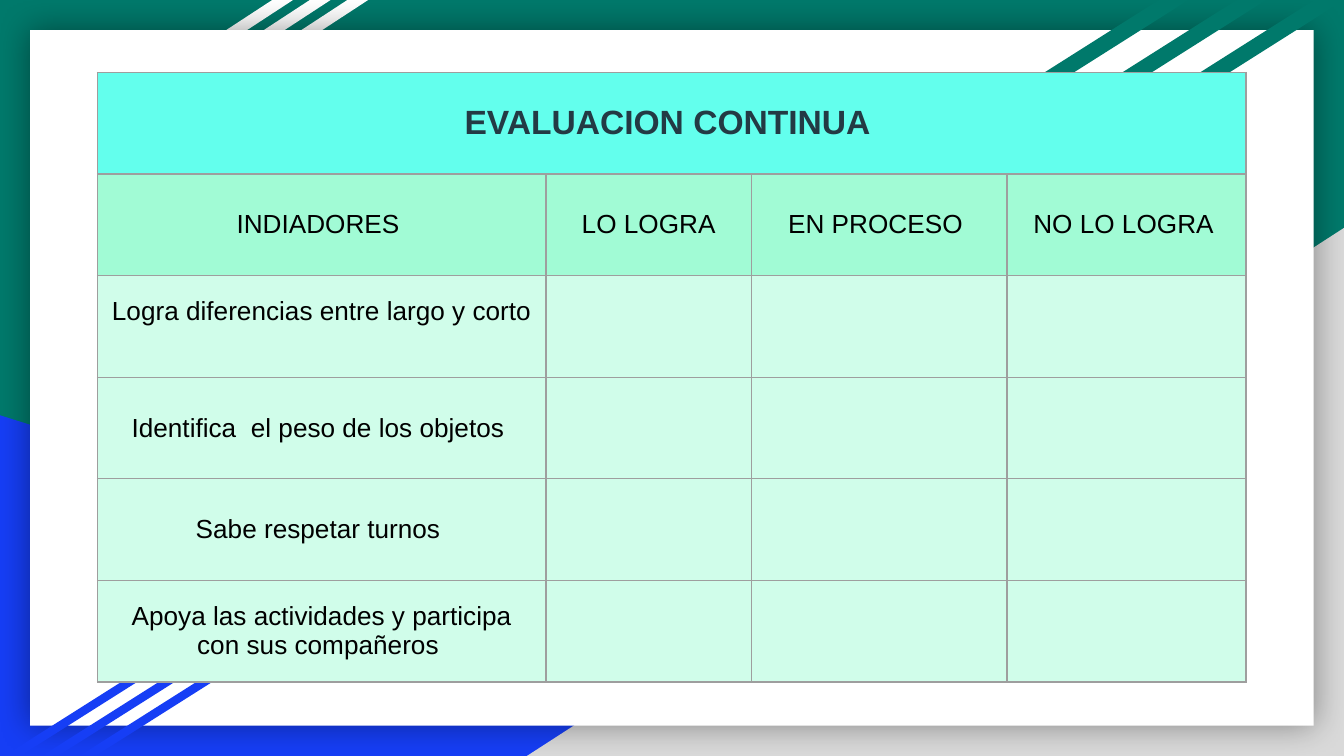
from dataclasses import dataclass

from lxml.etree import SubElement
from pptx import Presentation
from pptx.dml.color import RGBColor
from pptx.enum.shapes import MSO_SHAPE
from pptx.enum.text import MSO_ANCHOR, PP_ALIGN
from pptx.oxml.ns import qn
from pptx.util import Cm, Pt


@dataclass(frozen=True)
class Theme:
    green: str = "00796B"
    blue: str = "163EF5"
    grey: str = "D9D9D9"
    white: str = "FFFFFF"
    shadow: str = "000000"
    border: str = "9E9E9E"
    title_fill: str = "63FFED"
    header_fill: str = "A1FBD5"
    body_fill: str = "D0FDEA"
    title_text: str = "233A44"
    text: str = "000000"
    font: str = "Arial"
    title_size: int = 18
    text_size: int = 14
    border_width: float = 0.75


THEME = Theme()

HEADERS = ["INDIADORES ", "LO LOGRA", "EN PROCESO ", "NO LO LOGRA "]
INDICATORS = [
    "Logra diferencias entre largo y corto",
    "Identifica  el peso de los objetos ",
    "Sabe respetar turnos ",
    "Apoya las actividades y participa con sus compañeros ",
]
COLUMN_WIDTHS = [8.48, 3.88, 4.83, 4.52]
ROW_HEIGHT = 1.92


def set_format(target, values):
    for name, value in values.items():
        setattr(target, name, value)


def add_shape(shapes, kind, left, top, width, height, color):
    shape = shapes.add_shape(kind, Cm(left), Cm(top), Cm(width), Cm(height))
    shape.shadow.inherit = False
    shape.fill.solid()
    shape.fill.fore_color.rgb = RGBColor.from_string(color)
    shape.line.fill.background()
    return shape


def add_stripes(slide, left, top, width, height, step, slant, color):
    """Group three equally spaced slanted bars, the rightmost at the back."""
    group = slide.shapes.add_group_shape()
    for index in reversed(range(3)):
        bar = add_shape(group.shapes, MSO_SHAPE.PARALLELOGRAM,
                        left + index * step, top, width, height, color)
        bar.adjustments[0] = slant


def add_glow_shadow(shape):
    effects = shape._element.spPr.find(qn("a:effectLst"))
    shadow = SubElement(effects, qn("a:outerShdw"), blurRad=str(Pt(18)),
                        dist="0", dir="0", algn="ctr", rotWithShape="0")
    color = SubElement(shadow, qn("a:srgbClr"), val=THEME.shadow)
    SubElement(color, qn("a:alpha"), val="40000")


def add_borders(cell):
    properties = cell._tc.get_or_add_tcPr()
    for side in ("a:lnL", "a:lnR", "a:lnT", "a:lnB"):
        line = SubElement(properties, qn(side), w=str(Pt(THEME.border_width)))
        fill = SubElement(line, qn("a:solidFill"))
        SubElement(fill, qn("a:srgbClr"), val=THEME.border)


def format_cell(cell, fill):
    margins = ("margin_left", "margin_right", "margin_top", "margin_bottom")
    set_format(cell, dict.fromkeys(margins, Cm(0.25)))
    cell.vertical_anchor = MSO_ANCHOR.MIDDLE
    add_borders(cell)
    cell.fill.solid()
    cell.fill.fore_color.rgb = RGBColor.from_string(fill)


def write_cell(cell, text, size=THEME.text_size, color=THEME.text, bold=False):
    para = cell.text_frame.paragraphs[0]
    para.alignment = PP_ALIGN.CENTER
    span = para.add_run()
    span.text = text
    set_format(span.font, {"name": THEME.font, "size": Pt(size), "bold": bold})
    span.font.color.rgb = RGBColor.from_string(color)


def add_evaluation_table(slide):
    row_fills = [THEME.title_fill, THEME.header_fill]
    row_fills += [THEME.body_fill] * len(INDICATORS)
    frame = slide.shapes.add_table(
        len(row_fills), len(COLUMN_WIDTHS), Cm(1.84), Cm(1.37),
        Cm(sum(COLUMN_WIDTHS)), Cm(ROW_HEIGHT * len(row_fills)))
    table = frame.table
    set_format(table, {"first_row": False, "horz_banding": False})
    for column, width in zip(table.columns, COLUMN_WIDTHS):
        column.width = Cm(width)
    for row, fill in zip(table.rows, row_fills):
        row.height = Cm(ROW_HEIGHT)
        for cell in row.cells:
            format_cell(cell, fill)

    # Title row, column headings and indicators
    title = table.cell(0, 0)
    title.merge(table.cell(0, len(COLUMN_WIDTHS) - 1))
    write_cell(title, "EVALUACION CONTINUA ", THEME.title_size,
               THEME.title_text, True)
    for index, text in enumerate(HEADERS):
        write_cell(table.cell(1, index), text)
    for index, text in enumerate(INDICATORS, start=2):
        write_cell(table.cell(index, 0), text)

    # The first indicator sits above the middle of its row
    table.cell(2, 0).margin_bottom = Cm(0.8)


def add_backdrop(slide):
    slide.background.fill.solid()
    slide.background.fill.fore_color.rgb = RGBColor.from_string(THEME.green)

    # Corner triangles
    add_shape(slide.shapes, MSO_SHAPE.RIGHT_TRIANGLE,
              0, 7.85, 20.47, 6.44, THEME.blue)
    corner = add_shape(slide.shapes, MSO_SHAPE.RIGHT_TRIANGLE,
                       9.96, 4.31, 15.44, 9.98, THEME.grey)
    corner._element.spPr.find(qn("a:xfrm")).set("flipH", "1")

    # White card between the stripes
    add_stripes(slide, 0.71, 0, 4.83, 2.9, 0.71, 1.53, THEME.white)
    card = add_shape(slide.shapes, MSO_SHAPE.RECTANGLE,
                     0.57, 0.57, 24.26, 13.15, THEME.white)
    add_glow_shadow(card)
    add_stripes(slide, 0.1, 12.57, 3, 1.71, 0.71, 1.58, THEME.blue)
    add_stripes(slide, 16.36, 0, 6.1, 3.51, 1.47, 1.58, THEME.green)


def main():
    deck = Presentation()
    set_format(deck, {"slide_width": Cm(25.4), "slide_height": Cm(14.29)})
    slide = deck.slides.add_slide(deck.slide_layouts.get_by_name("Blank"))
    add_backdrop(slide)
    add_evaluation_table(slide)
    deck.save("out.pptx")


if __name__ == "__main__":
    main()
